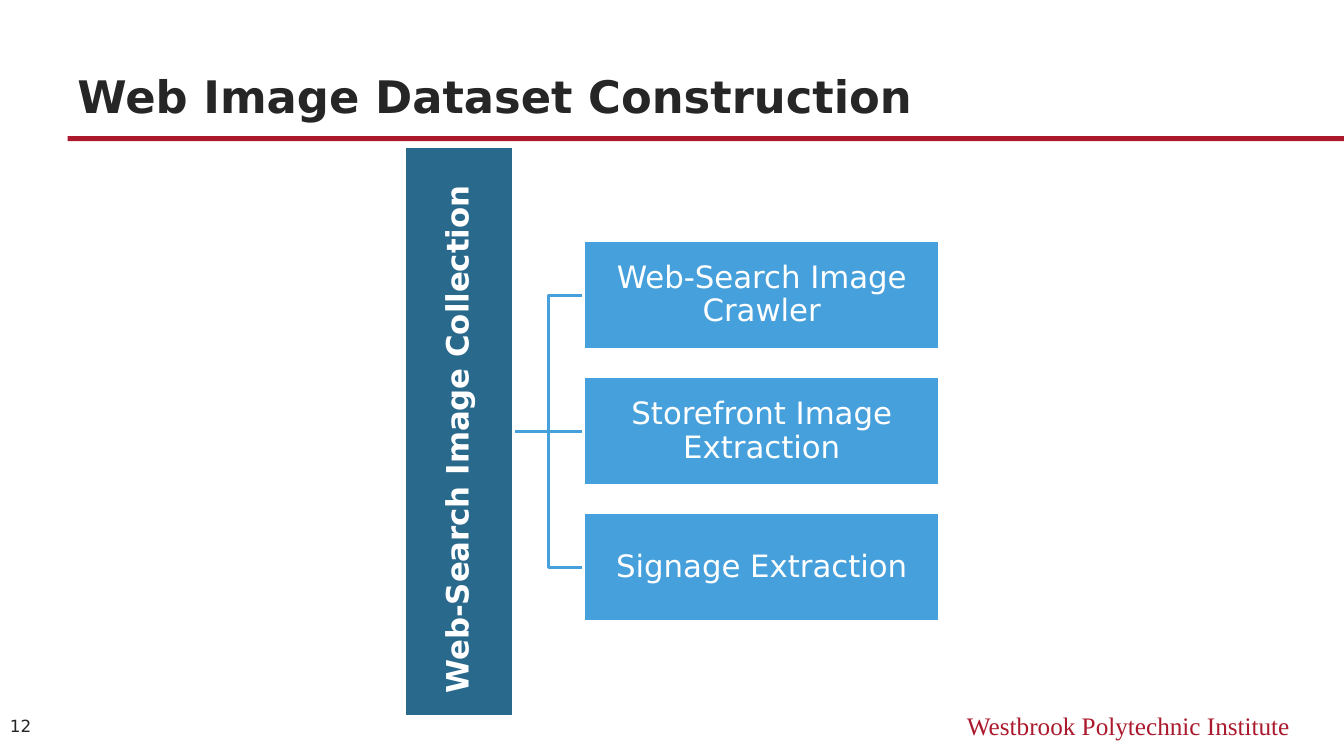
import dataclasses

import pptx
import pptx.dml.color
import pptx.enum.shapes
import pptx.enum.text
import pptx.util

ALIGN = pptx.enum.text.PP_ALIGN
ANCHOR = pptx.enum.text.MSO_ANCHOR
EMU_PER_PX = 9144


@dataclasses.dataclass(frozen=True)
class Theme:
    crimson: str = "AB192D"
    ink: str = "262626"
    navy: str = "29698C"
    sky: str = "46A0DC"
    white: str = "FFFFFF"
    sans: str = "DejaVu Sans"
    serif: str = "Times New Roman"
    title_size: int = 32
    box_size: int = 22
    footer_size: int = 18
    number_size: int = 12
    line_width: int = 2


THEME = Theme()


def px(length):
    return pptx.util.Emu(length * EMU_PER_PX)


def rgb(value):
    return pptx.dml.color.RGBColor.from_string(value)


def set_text(shape, text, size, color, font=THEME.sans, bold=False,
             align=ALIGN.LEFT, anchor=ANCHOR.TOP, insets=(10, 5, 10, 5),
             spacing=1.0):
    frame = shape.text_frame
    frame.word_wrap = True
    frame.vertical_anchor = anchor
    frame.margin_left, frame.margin_top, frame.margin_right, frame.margin_bottom = map(px, insets)
    para = frame.paragraphs[0]
    para.text = text
    para.alignment = align
    para.line_spacing = spacing
    para.font.name = font
    para.font.size = pptx.util.Pt(size)
    para.font.bold = bold
    para.font.color.rgb = rgb(color)


def add_label(page, bounds, text, size, color, **style):
    set_text(page.shapes.add_textbox(*map(px, bounds)), text, size, color, **style)


def add_block(page, bounds, fill, outline=None):
    block = page.shapes.add_shape(
        pptx.enum.shapes.MSO_SHAPE.RECTANGLE, *map(px, bounds))
    block.shadow.inherit = False
    block.fill.solid()
    block.fill.fore_color.rgb = rgb(fill)
    if outline:
        block.line.color.rgb = rgb(outline)
        block.line.width = pptx.util.Pt(THEME.line_width)
    else:
        block.line.fill.background()
    return block


def add_branch(page, points):
    builder = page.shapes.build_freeform(*points[0], scale=EMU_PER_PX)
    builder.add_line_segments(points[1:], close=False)
    branch = builder.convert_to_shape()
    branch.shadow.inherit = False
    branch.fill.background()
    branch.line.color.rgb = rgb(THEME.sky)
    branch.line.width = pptx.util.Pt(THEME.line_width)


def add_hierarchy(page, root_text, step_texts):
    root_right, step_left, middle = 509, 579, 428
    root_length, step_width, thickness, pitch = 566, 353, 108, 135
    elbow = (root_right + step_left) // 2
    first = middle - pitch * (len(step_texts) - 1) // 2
    centers = [first + pitch * index for index in range(len(step_texts))]

    for center in centers:
        if center == middle:
            bends = []
        else:
            bends = [(elbow, middle), (elbow, center)]
        add_branch(page, [(root_right, middle), *bends, (step_left, center)])

    root_left = root_right - (root_length + thickness) // 2
    root = add_block(page, (root_left, middle - thickness // 2, root_length, thickness),
                     THEME.navy, THEME.white)
    root.rotation = 270
    set_text(root, root_text, THEME.box_size, THEME.white, bold=True,
             anchor=ANCHOR.MIDDLE, insets=(23, 2, 2, 2), spacing=0.9)

    for center, text in zip(centers, step_texts):
        step = add_block(page, (step_left, center - thickness // 2, step_width, thickness),
                         THEME.sky, THEME.white)
        set_text(step, text, THEME.box_size, THEME.white, align=ALIGN.CENTER,
                 anchor=ANCHOR.MIDDLE, insets=(2, 2, 2, 2), spacing=0.9)


def main():
    deck = pptx.Presentation()
    deck.slide_width, deck.slide_height = px(1333), px(750)
    page = deck.slides.add_slide(deck.slide_layouts[6])

    add_block(page, (67, 135, 1266, 5), THEME.crimson)
    add_label(page, (800, 700, 489, 40), "Westbrook Polytechnic Institute",
              THEME.footer_size, THEME.crimson, font=THEME.serif, align=ALIGN.RIGHT)
    add_label(page, (67, 38, 1200, 88), "Web Image Dataset Construction",
              THEME.title_size, THEME.ink, bold=True, anchor=ANCHOR.BOTTOM)
    add_label(page, (0, 699, 67, 43), "12", THEME.number_size, THEME.ink,
              anchor=ANCHOR.MIDDLE)
    add_hierarchy(page, "Web-Search Image Collection", [
        "Web-Search Image Crawler",
        "Storefront Image Extraction",
        "Signage Extraction",
    ])
    deck.save("out.pptx")


if __name__ == "__main__":
    main()
